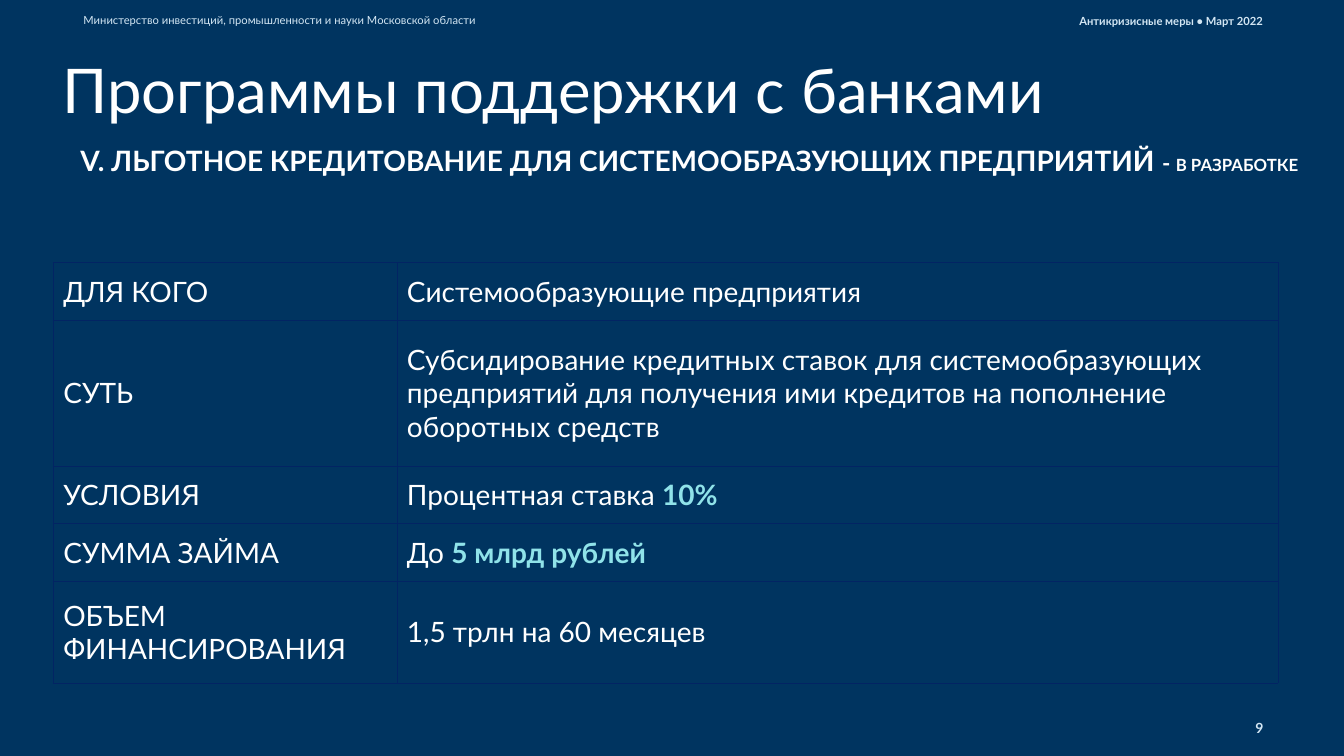
from lxml import etree
from pptx import Presentation
from pptx.dml import color as dml
from pptx.enum import text as txt
from pptx.oxml import ns
from pptx.util import Pt

COLORS = {"navy": "003460", "border": "022463", "pale": "D3E6F3",
          "white": "FFFFFF", "accent": "90E3E9"}
SMALL = {"size": Pt(8), "bold": False, "color": "pale"}
SMALL_BOLD = {**SMALL, "bold": True}
PAGE = {**SMALL_BOLD, "size": Pt(10)}
TITLE = {"size": Pt(44), "bold": False, "color": "white"}
BODY = {**TITLE, "size": Pt(20)}
KEY = {"size": Pt(20), "bold": True, "color": "accent"}
HEADING = {**KEY, "color": "white"}
DASH = {**HEADING, "size": Pt(16)}
STATUS = {**HEADING, "size": Pt(12)}

COLUMN_WIDTHS = (245.5, 629.5)
PROGRAM = [
    (41, "ДЛЯ КОГО", [("Системообразующие предприятия", BODY)]),
    (104.5, "СУТЬ", [("Субсидирование кредитных ставок для системообразующих "
                      "предприятий для получения ими кредитов на пополнение "
                      "оборотных средств", BODY)]),
    (41, "УСЛОВИЯ", [("Процентная ставка ", BODY), ("10%", KEY)]),
    (41, "СУММА ЗАЙМА", [("До ", BODY), ("5 млрд рублей", KEY)]),
    (73, "ОБЪЕМ ФИНАНСИРОВАНИЯ", [("1,5 трлн на 60 месяцев", BODY)]),
]


def rgb(name):
    """Return the palette colour with this name."""
    return dml.RGBColor.from_string(COLORS[name])


def write(paragraph, pieces):
    """Add each (wording, format) piece to the paragraph as a run."""
    for wording, style in pieces:
        run = paragraph.add_run()
        run.text = wording
        run.font.name = "Lato"
        for attribute, value in style.items():
            if attribute == "color":
                run.font.color.rgb = rgb(value)
            else:
                setattr(run.font, attribute, value)


def add_text(slide, place, pieces, anchor=txt.MSO_ANCHOR.MIDDLE, **layout):
    """Add a wrapped text box at a place given in points."""
    frame = slide.shapes.add_textbox(*map(Pt, place)).text_frame
    frame.word_wrap = True
    frame.vertical_anchor = anchor
    paragraph = frame.paragraphs[0]
    for attribute, value in layout.items():
        setattr(paragraph, attribute, value)
    write(paragraph, pieces)


def fill_cell(cell, pieces):
    """Give a cell thin borders, no fill and its wording."""
    properties = cell._tc.get_or_add_tcPr()
    for side in ("a:lnL", "a:lnR", "a:lnT", "a:lnB"):
        border = etree.SubElement(properties, ns.qn(side), w=str(Pt(0.5)))
        solid = etree.SubElement(border, ns.qn("a:solidFill"))
        etree.SubElement(solid, ns.qn("a:srgbClr"), val=COLORS["border"])
    cell.fill.background()
    cell.vertical_anchor = txt.MSO_ANCHOR.MIDDLE
    write(cell.text_frame.paragraphs[0], pieces)


def add_program_table(slide, left, top):
    """Add the table of the lending programme's terms."""
    height = sum(row[0] for row in PROGRAM)
    place = map(Pt, (left, top, sum(COLUMN_WIDTHS), height))
    terms = slide.shapes.add_table(len(PROGRAM), len(COLUMN_WIDTHS), *place).table
    terms.first_row = terms.horz_banding = False
    for column, width in zip(terms.columns, COLUMN_WIDTHS):
        column.width = Pt(width)
    for row, (row_height, label, details) in zip(terms.rows, PROGRAM):
        row.height = Pt(row_height)
        fill_cell(row.cells[0], [(label, BODY)])
        fill_cell(row.cells[1], details)


def main():
    """Build the slide and save it."""
    deck = Presentation()
    deck.slide_width, deck.slide_height = Pt(960), Pt(540)
    slide = deck.slides.add_slide(deck.slide_layouts[6])
    slide.background.fill.solid()
    slide.background.fill.fore_color.rgb = rgb("navy")
    right = txt.PP_ALIGN.RIGHT
    add_text(slide, (52.5, 5.8, 407, 17),
             [("Министерство инвестиций, промышленности и науки Московской области", SMALL)],
             txt.MSO_ANCHOR.TOP)
    add_text(slide, (693.5, 511, 216, 18), [("9", PAGE)], alignment=right)
    add_text(slide, (585.5, 8.5, 324, 13),
             [("Антикризисные меры • Март 2022", SMALL_BOLD)], alignment=right)
    add_program_table(slide, 38, 187.5)
    add_text(slide, (37.5, 26, 860, 81),
             [("Программы поддержки с банками", TITLE)], line_spacing=0.9)
    add_text(slide, (50.4, 97, 900, 37.5),
             [("V. ЛЬГОТНОЕ КРЕДИТОВАНИЕ ДЛЯ СИСТЕМООБРАЗУЮЩИХ ПРЕДПРИЯТИЙ ", HEADING),
              ("- ", DASH), ("В РАЗРАБОТКЕ", STATUS)], line_spacing=0.9)
    deck.save("out.pptx")


if __name__ == "__main__":
    main()
